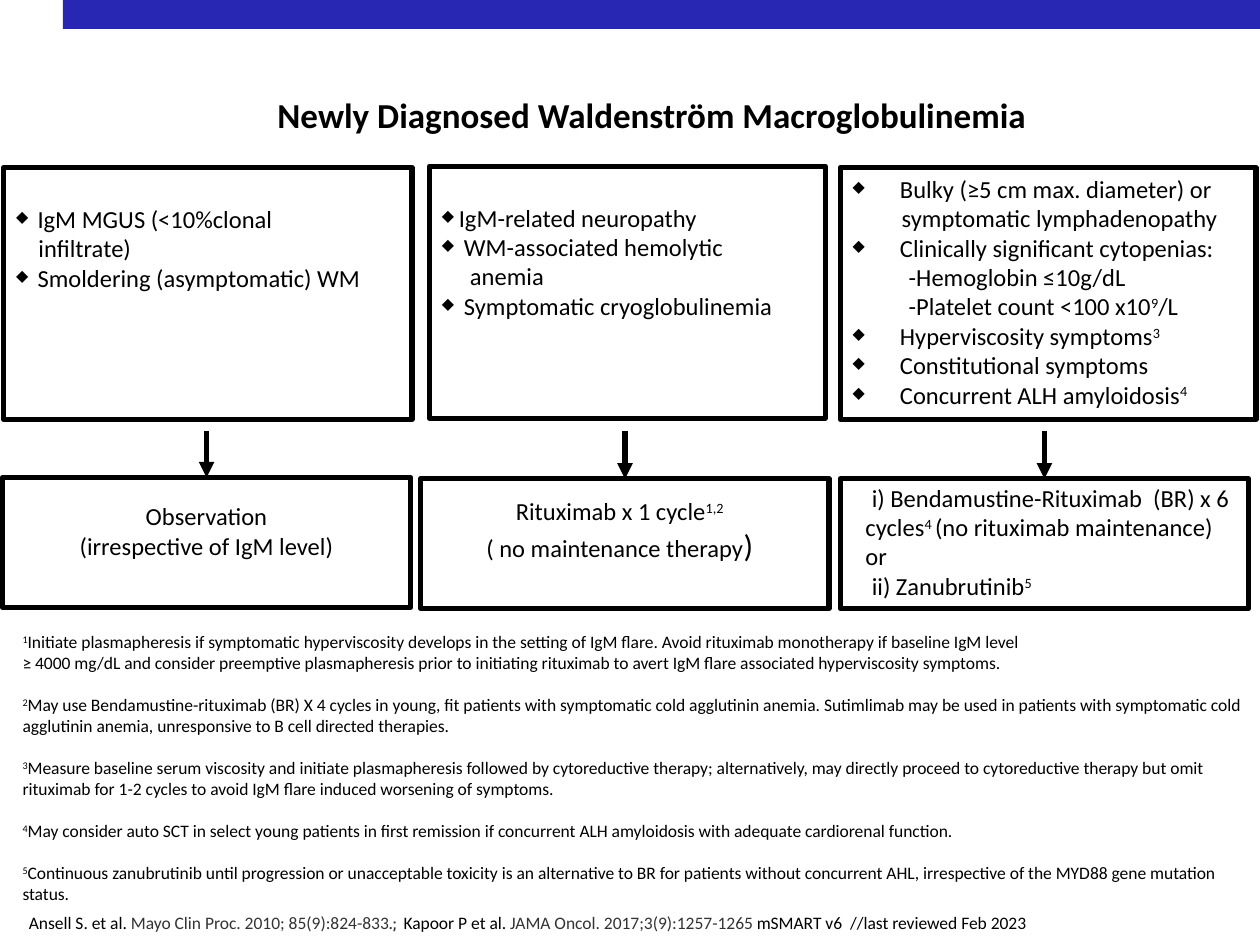
from lxml import etree
from pptx import Presentation
from pptx.dml.color import RGBColor
from pptx.enum import shapes, text
from pptx.oxml import ns
from pptx.util import Pt

BLACK = RGBColor(0, 0, 0)
GREY = RGBColor(0x33, 0x33, 0x33)
BLUE = RGBColor(0x27, 0x27, 0xB3)
FONT = "Calibri"
BODY, NOTE = 14, 10
LEFT, CENTER = text.PP_ALIGN.LEFT, text.PP_ALIGN.CENTER

COLUMNS = [
    {
        "criteria_box": (2.2, 95.8, 233.3, 144),
        "criteria_top": 20.8,
        "criteria": [
            ("IgM MGUS (<10%clonal", 12.2, True),
            ("infiltrate)", 12.7, False),
            ("Smoldering (asymptomatic) WM", 12.2, True),
        ],
        "treatment_box": (1.4, 272.9, 233.3, 74.2),
        "treatment_insets": (7.2, 13.7, 7.2),
        "treatment": [("Observation", 0), ("(irrespective of IgM level)", 0)],
        "align": CENTER,
    },
    {
        "criteria_box": (245.5, 95, 226.1, 144),
        "criteria_top": 20.8,
        "criteria": [
            ("IgM-related neuropathy", 9.6, True),
            ("WM-associated hemolytic", 12.5, True),
            ("anemia", 16, False),
            ("Symptomatic cryoglobulinemia", 12.5, True),
        ],
        "treatment_box": (240.5, 273.6, 233.3, 74.2),
        "treatment_insets": (7.2, 10, 13),
        "treatment": [("Rituximab x 1 cycle^1,2^", 0), ("( no maintenance therapy)", 0)],
        "align": CENTER,
    },
    {
        "criteria_box": (480.2, 95.8, 237.6, 144),
        "criteria_top": 3.6,
        "criteria": [
            ("Bulky (≥5 cm max. diameter) or", 27, True),
            ("symptomatic lymphadenopathy", 28, False),
            ("Clinically significant cytopenias:", 27, True),
            ("-Hemoglobin ≤10g/dL", 32, False),
            ("-Platelet count <100 x10^9^/L", 32, False),
            ("Hyperviscosity symptoms^3^", 27, True),
            ("Constitutional symptoms", 27, True),
            ("Concurrent ALH amyloidosis^4^", 27, True),
        ],
        "treatment_box": (480.2, 273.6, 233.3, 74.2),
        "treatment_insets": (14.4, 2.2, 2),
        "treatment": [
            ("i) Bendamustine-Rituximab  (BR) x 6 cycles^4 ^(no rituximab maintenance)", 3.6),
            ("or", 0),
            ("ii) Zanubrutinib^5^", 3.6),
        ],
        "align": LEFT,
    },
]

FOOTNOTES = [
    "^1^Initiate plasmapheresis if symptomatic hyperviscosity develops in the setting of IgM flare. "
    "Avoid rituximab monotherapy if baseline IgM level",
    "≥ 4000 mg/dL and consider preemptive plasmapheresis prior to initiating rituximab to avert "
    "IgM flare associated hyperviscosity symptoms.",
    "^2^May use Bendamustine-rituximab (BR) X 4 cycles in young, fit patients with symptomatic cold "
    "agglutinin anemia. Sutimlimab may be used in patients with symptomatic cold agglutinin anemia, "
    "unresponsive to B cell directed therapies.",
    "^3^Measure baseline serum viscosity and initiate plasmapheresis followed by cytoreductive therapy; "
    "alternatively, may directly proceed to cytoreductive therapy but omit rituximab for 1-2 cycles "
    "to avoid IgM flare induced worsening of symptoms.",
    "^4^May consider auto SCT in select young patients in first remission if concurrent ALH amyloidosis "
    "with adequate cardiorenal function.",
    "^5^Continuous zanubrutinib until progression or unacceptable toxicity is an alternative to BR for "
    "patients without concurrent AHL, irrespective of the MYD88 gene mutation status.",
]

CITATION = [
    ("Ansell S. et al. ", BLACK, FONT, NOTE, False),
    ("Mayo Clin Proc. 2010; 85(9):824-833", GREY, FONT, NOTE, False),
    (".;  ", GREY, "Roboto", 8, True),
    ("Kapoor P et al. ", BLACK, FONT, NOTE, False),
    ("JAMA Oncol. 2017;3(9):1257-1265 ", GREY, FONT, NOTE, False),
    ("mSMART v6  //last reviewed Feb 2023", BLACK, FONT, NOTE, False),
]


def add_run(paragraph, words, size, color=BLACK, font=FONT, bold=False):
    """Append one formatted run and return it."""
    run = paragraph.add_run()
    run.text = words
    run.font.name, run.font.size, run.font.bold = font, Pt(size), bold
    run.font.color.rgb = color
    return run


def add_marked_text(paragraph, words, size):
    """Write text in which carets enclose superscripts."""
    for index, part in enumerate(words.split("^")):
        if part:
            run = add_run(paragraph, part, size)
            if index % 2:
                run.font._element.set("baseline", "30000")


def set_indent(paragraph, margin, first, bullet=False):
    """Set the left margin, first-line indent and optional diamond bullet."""
    properties = paragraph._p.get_or_add_pPr()
    properties.set("marL", str(Pt(margin)))
    properties.set("indent", str(Pt(first)))
    if bullet:
        etree.SubElement(properties, ns.qn("a:buSzPct")).set("val", "65000")
        etree.SubElement(properties, ns.qn("a:buChar")).set("char", "◆")


def prepare_frame(shape, left=7.2, top=3.6, right=7.2):
    """Give a shape a wrapping, top-anchored text frame and return it."""
    frame = shape.text_frame
    frame.word_wrap = True
    frame.vertical_anchor = text.MSO_ANCHOR.TOP
    frame.margin_left, frame.margin_top, frame.margin_right = Pt(left), Pt(top), Pt(right)
    frame.margin_bottom = Pt(0)
    return frame


def add_paragraphs(frame, count):
    """Return the given number of paragraphs in an empty frame."""
    return [frame.paragraphs[0]] + [frame.add_paragraph() for _ in range(count - 1)]


def add_outlined_box(slide, box):
    """Add an unfilled rectangle with a heavy black border."""
    shape = slide.shapes.add_shape(shapes.MSO_SHAPE.RECTANGLE, *map(Pt, box))
    shape.shadow.inherit = False
    shape.fill.background()
    shape.line.color.rgb, shape.line.width = BLACK, Pt(3)
    return shape


def add_criteria(slide, box, top, lines):
    """Add a box listing the criteria of one patient group."""
    frame = prepare_frame(add_outlined_box(slide, box), top=top)
    for paragraph, (words, margin, bullet) in zip(add_paragraphs(frame, len(lines)), lines):
        paragraph.alignment = LEFT
        set_indent(paragraph, margin, -margin if bullet else 0, bullet)
        add_marked_text(paragraph, words, BODY)


def add_treatment(slide, box, insets, lines, align):
    """Add a box with the recommended treatment and return it."""
    shape = add_outlined_box(slide, box)
    frame = prepare_frame(shape, *insets)
    for paragraph, (words, first) in zip(add_paragraphs(frame, len(lines)), lines):
        paragraph.alignment = align
        set_indent(paragraph, 0, first)
        if words.endswith("therapy)"):
            add_marked_text(paragraph, words[:-1], BODY)
            add_run(paragraph, ")", 18)
        else:
            add_marked_text(paragraph, words, BODY)
    return shape


def add_arrow(slide, treatment):
    """Add an arrow that leads down to a treatment box."""
    center = treatment.left + treatment.width // 2
    arrow = slide.shapes.add_connector(
        shapes.MSO_CONNECTOR.STRAIGHT, center, Pt(246.2), center, treatment.top)
    arrow.end_connect(treatment, 0)
    arrow.line.color.rgb, arrow.line.width = BLACK, Pt(3)
    etree.SubElement(arrow.line._get_or_add_ln(), ns.qn("a:tailEnd")).set("type", "triangle")
    etree.SubElement(arrow._element.spPr, ns.qn("a:effectLst"))


def add_column(slide, column):
    """Add one pathway from criteria to treatment."""
    add_criteria(slide, column["criteria_box"], column["criteria_top"], column["criteria"])
    treatment = add_treatment(slide, column["treatment_box"], column["treatment_insets"],
                              column["treatment"], column["align"])
    add_arrow(slide, treatment)


def add_header(slide, bar_box, title_box):
    """Add the top bar and place the title."""
    bar = slide.shapes.add_shape(shapes.MSO_SHAPE.RECTANGLE, *map(Pt, bar_box))
    bar.shadow.inherit = False
    bar.fill.solid()
    bar.fill.fore_color.rgb = BLUE
    bar.line.fill.background()
    title = slide.shapes.title
    title.left, title.top, title.width, title.height = map(Pt, title_box)
    paragraph = prepare_frame(title).paragraphs[0]
    paragraph.alignment = CENTER
    add_run(paragraph, "Newly Diagnosed Waldenström Macroglobulinemia", 20, bold=True)


def add_footnotes(slide, box):
    """Add the numbered footnotes, spaced by one line."""
    frame = prepare_frame(slide.shapes.add_textbox(*map(Pt, box)), right=3.6)
    for index, paragraph in enumerate(add_paragraphs(frame, len(FOOTNOTES))):
        if index > 1:
            paragraph.space_before = Pt(12)
        add_marked_text(paragraph, FOOTNOTES[index], NOTE)


def add_citation(slide, box):
    """Add the source line at the foot of the slide."""
    frame = prepare_frame(slide.shapes.add_textbox(*map(Pt, box)))
    for words, color, font, size, bold in CITATION:
        add_run(frame.paragraphs[0], words, size, color, font, bold)


def main():
    """Build and save the slide."""
    presentation = Presentation()
    presentation.slide_width, presentation.slide_height = Pt(720), Pt(540)
    slide = presentation.slides.add_slide(presentation.slide_layouts[5])
    add_header(slide, (36, 0, 684, 16.6), (28, 49.7, 689, 31.7))
    for column in COLUMNS:
        add_column(slide, column)
    add_footnotes(slide, (5.8, 357.1, 714, 165))
    add_citation(slide, (9.4, 517.7, 700, 19.4))
    presentation.save("out.pptx")


if __name__ == "__main__":
    main()
